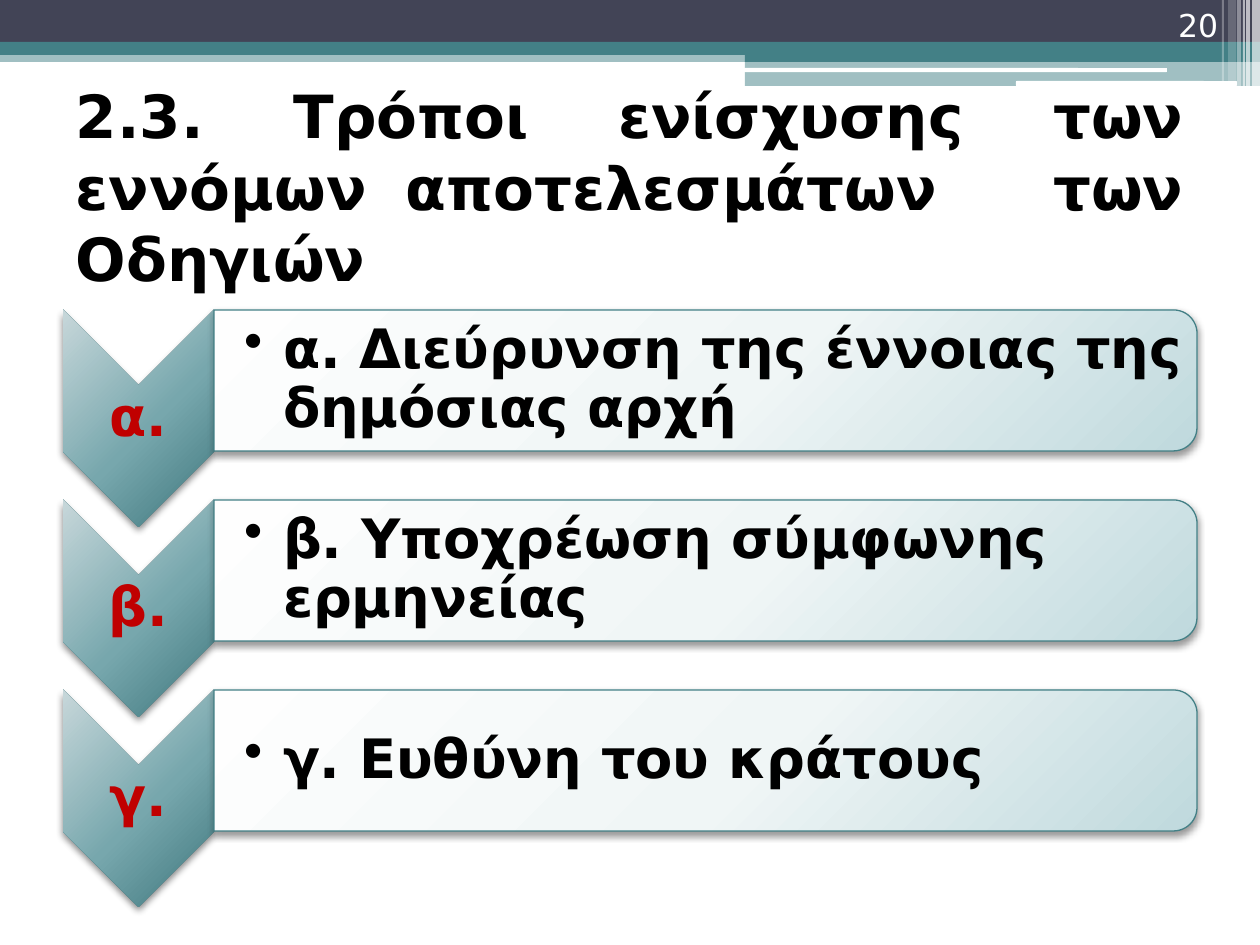
from lxml import etree
from pptx import Presentation
from pptx import util as u
from pptx.dml.color import RGBColor
from pptx.enum import shapes, text
from pptx.oxml import parse_xml
from pptx.oxml.ns import nsdecls, qn

PX = 914400 / 126
FONT = "DejaVu Sans"
HUES = {"navy": "424456", "teal": "438086", "white": "FFFFFF",
        "black": "000000", "red": "C00000"}
CHEVRON = ["C7D7DA", "77A7AD", "3E777D"]
BAR = ["FEFEFE", "F0F6F6", "BFD9DD"]
KIND = shapes.MSO_SHAPE
ALIGN = text.PP_ALIGN
ANCHOR = text.MSO_ANCHOR

# left, top, width, height, colour, opacity in percent
BANDS = [
    (0, 50, 1260, 12, "teal", 50),
    (0, 0, 1260, 42, "navy", 100),
    (0, 42, 1260, 13, "teal", 100),
    (745, 49, 515, 13, "teal", 100),
    (745, 61, 515, 25, "teal", 50),
]
PILLS = [(744, 68, 423, 4), (1016, 81, 221, 5)]
# left, width, height, opacity in percent
STRIPES = [(1252, 8, 86, 65), (1246, 4, 86, 65), (1243, 2, 86, 60),
           (1237, 4, 86, 40), (1228, 8, 81, 20), (1222, 2, 81, 30)]

ROWS = [("α.", "α. Διεύρυνση της έννοιας της δημόσιας αρχή"),
        ("β.", "β. Υποχρέωση σύμφωνης ερμηνείας"),
        ("γ.", "γ. Ευθύνη του κράτους")]
TOP, PITCH = 310, 190


def px(*vals):
    return [u.Emu(round(v * PX)) for v in vals]


def rgb(name):
    return RGBColor.from_string(HUES[name])


def block(slide, box, hue, alpha=100, kind=KIND.RECTANGLE):
    """Plain filled shape without outline."""
    shape = slide.shapes.add_shape(kind, *px(*box))
    shape.shadow.inherit = False
    shape.line.fill.background()
    shape.fill.solid()
    shape.fill.fore_color.rgb = rgb(hue)
    if alpha < 100:
        clr = shape._element.spPr.find(".//" + qn("a:srgbClr"))
        etree.SubElement(clr, qn("a:alpha"), val=str(alpha * 1000))
    return shape


def shade(shape, hues, alpha):
    """Radial gradient from the upper left, and a soft shadow below."""
    stops = "".join(f'<a:gs pos="{pos}000"><a:srgbClr val="{hue}"/></a:gs>'
                    for pos, hue in zip((0, 55, 100), hues))
    grad = parse_xml(
        f'<a:gradFill {nsdecls("a")} rotWithShape="1"><a:gsLst>{stops}</a:gsLst>'
        '<a:path path="circle"><a:fillToRect l="-40000" t="-90000" '
        'r="140000" b="190000"/></a:path></a:gradFill>')
    props = shape._element.spPr
    props.replace(props.find(qn("a:solidFill")), grad)
    props.find(qn("a:effectLst")).append(parse_xml(
        f'<a:outerShdw {nsdecls("a")} blurRad="51000" dist="25400" dir="5400000" '
        f'rotWithShape="0"><a:srgbClr val="000000"><a:alpha val="{alpha}000"/>'
        '</a:srgbClr></a:outerShdw>'))


def turned(slide, box, kind, hues, alpha):
    """Shape turned by 90 degrees so that it fills the given box."""
    x, y, w, h = box
    frame = (x + (w - h) / 2, y + (h - w) / 2, h, w)
    shape = block(slide, frame, "teal", kind=kind)
    shape.rotation = 90
    shade(shape, hues, alpha)
    return shape


def label(slide, box, words, size, hue, align, anchor=ANCHOR.MIDDLE,
          bold=True, pads=(13, 6, 13, 6), bullet=False, space=None):
    frame = slide.shapes.add_textbox(*px(*box)).text_frame
    frame.word_wrap = True
    frame.vertical_anchor = anchor
    (frame.margin_left, frame.margin_top,
     frame.margin_right, frame.margin_bottom) = px(*pads)
    para = frame.paragraphs[0]
    para.text = words
    para.alignment = align
    if space:
        para.line_spacing = space
    if bullet:
        props = para._p.get_or_add_pPr()
        indent = px(39)[0]
        props.set("marL", str(indent))
        props.set("indent", str(-indent))
        etree.SubElement(props, qn("a:buChar"), char="•")
    font = para.runs[0].font
    font.name, font.size, font.bold = FONT, u.Pt(size), bold
    font.color.rgb = rgb(hue)


def header(slide):
    for *box, hue, alpha in BANDS:
        block(slide, box, hue, alpha)
    for box in PILLS:
        block(slide, box, "white", kind=KIND.ROUNDED_RECTANGLE)
    for x, w, h, alpha in STRIPES:
        block(slide, (x, 0, w, h), "white", alpha)


def row(slide, y, mark, words):
    turned(slide, (63, y, 151, 217), KIND.CHEVRON, CHEVRON, 45)
    label(slide, (63, y + 76, 151, 66), mark, 31, "red", ALIGN.CENTER,
          pads=(3, 3, 3, 3), space=0.9)
    bar = turned(slide, (214, y, 983, 141), KIND.ROUND_2_SAME_RECTANGLE, BAR, 40)
    bar.line.color.rgb = rgb("teal")
    bar.line.width = u.Pt(0.75)
    label(slide, (214, y + 7, 975, 127), words, 31, "black", ALIGN.LEFT,
          pads=(30, 3, 3, 3), bullet=True, space=0.9)


def main():
    deck = Presentation()
    deck.slide_width, deck.slide_height = px(1260, 945)
    slide = deck.slides.add_slide(deck.slide_layouts[6])

    # Header decoration
    header(slide)

    # Chevron list
    for i, (mark, words) in enumerate(ROWS):
        row(slide, TOP + i * PITCH, mark, words)

    # Page number and title
    label(slide, (1126, 0, 105, 50), "20", 18, "white", ALIGN.RIGHT,
          ANCHOR.BOTTOM, bold=False)
    label(slide, (63, 88, 1134, 197),
          "2.3. Τρόποι ενίσχυσης των εννόμων αποτελεσμάτων   των Οδηγιών",
          34, "black", ALIGN.JUSTIFY)

    deck.save("out.pptx")


if __name__ == "__main__":
    main()
